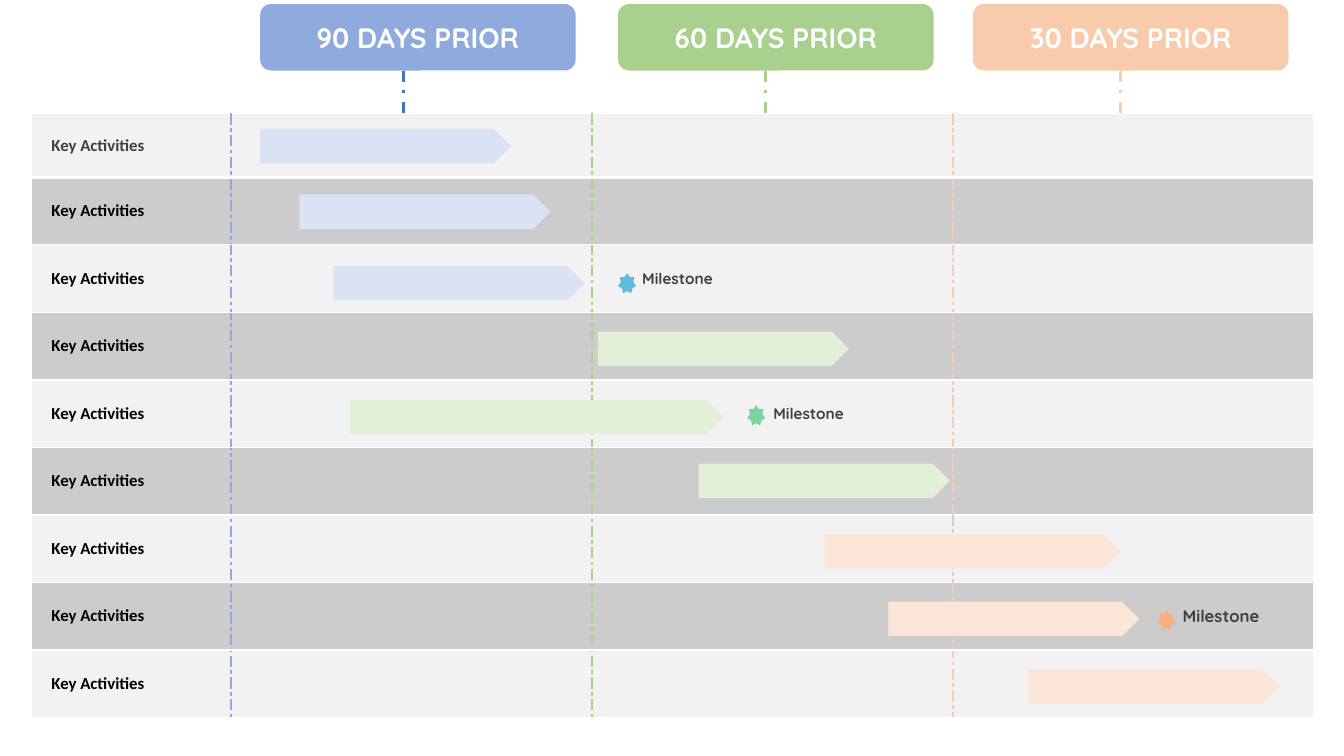
from dataclasses import dataclass
from typing import Optional

from lxml import etree
from pptx import Presentation
from pptx.dml.color import RGBColor
from pptx.enum import dml, shapes, text
from pptx.oxml import ns
from pptx.util import Inches, Pt


@dataclass(frozen=True)
class Theme:
    blue: str = "8FAADC"
    green: str = "A9D18E"
    orange: str = "F8CBAD"
    pale_blue: str = "DAE3F3"
    pale_green: str = "E2F0D9"
    pale_orange: str = "FBE5D6"
    deep_blue: str = "4472C4"
    white: str = "FFFFFF"
    black: str = "000000"
    dark: str = "404040"
    rule_grey: str = "D0CECE"
    light_row: str = "F2F2F2"
    dark_row: str = "CCCCCC"
    label_font: str = "Calibri"
    display_font: str = "Quicksand"
    header_size: int = 20
    label_size: int = 12
    milestone_size: int = 11


@dataclass(frozen=True)
class Phase:
    title: str
    left: float
    stem_x: float
    fill: str
    stem: str


@dataclass(frozen=True)
class Bar:
    left: float
    top: float
    fill: str
    width: float = 2.49


@dataclass(frozen=True)
class Milestone:
    row: int
    col: int
    indent: float
    size: int
    star_left: float
    star_top: float
    fill: str


@dataclass(frozen=True)
class Border:
    color: str
    width: float = 1
    dash: Optional[str] = None


T = Theme()

PHASES = [
    Phase("90 DAYS PRIOR", 2.58, 4, T.blue, T.deep_blue),
    Phase("60 DAYS PRIOR", 6.13, 7.59, T.green, T.green),
    Phase("30 DAYS PRIOR", 9.65, 11.11, T.orange, T.orange),
]
BARS = [
    Bar(2.58, 1.28, T.pale_blue),
    Bar(2.97, 1.93, T.pale_blue),
    Bar(3.31, 2.64, T.pale_blue),
    Bar(5.93, 3.29, T.pale_green),
    Bar(3.47, 3.97, T.pale_green, 3.71),
    Bar(6.93, 4.6, T.pale_green),
    Bar(8.18, 5.3, T.pale_orange, 2.93),
    Bar(8.81, 5.97, T.pale_orange),
    Bar(10.2, 6.64, T.pale_orange),
]
MILESTONES = [
    Milestone(2, 2, 0.5, T.milestone_size, 6.13, 2.71, "5DBBDC"),
    Milestone(4, 2, 1.8, T.milestone_size, 7.41, 4.02, "7ED39C"),
    Milestone(7, 3, 2.28, T.label_size, 11.48, 6.05, "F4B183"),
]
COL_WIDTHS = [1.98, 3.58, 3.58, 3.58]
ROW_HEIGHTS = [0.63] + [0.67] * 8
TABLE_LEFT, TABLE_TOP = 0.31, 1.13
HEADER_TOP, HEADER_HEIGHT = 0.04, 0.66
GREY_RULE_ROW = 6  # the 30-day rule turns grey in this row


def add_run(tf, content: str, font: str, size: int, color: str) -> None:
    r = tf.paragraphs[0].add_run()
    r.text = content
    r.font.name, r.font.size, r.font.bold = font, Pt(size), True
    r.font.color.rgb = RGBColor.from_string(color)


def add_filled(slide, kind, left: float, top: float, width: float, height: float, fill: str):
    sp = slide.shapes.add_shape(kind, Inches(left), Inches(top), Inches(width), Inches(height))
    sp.shadow.inherit = False
    sp.fill.solid()
    sp.fill.fore_color.rgb = RGBColor.from_string(fill)
    sp.line.fill.background()
    return sp


def set_borders(cell, borders: dict[str, Border]) -> None:
    tc_pr = cell._tc.get_or_add_tcPr()
    for i, side in enumerate("LRTB"):
        border = borders[side]
        ln = etree.Element(ns.qn(f"a:ln{side}"), w=str(Pt(border.width)))
        solid = etree.SubElement(ln, ns.qn("a:solidFill"))
        etree.SubElement(solid, ns.qn("a:srgbClr"), val=border.color)
        etree.SubElement(ln, ns.qn("a:prstDash"), val=border.dash or "solid")
        tc_pr.insert(i, ln)


def fill_cell_text(cell, content: str, indent: float, font: str, size: int, color: str) -> None:
    cell.margin_left = Inches(indent)
    cell.vertical_anchor = text.MSO_ANCHOR.MIDDLE
    add_run(cell.text_frame, content, font, size, color)


def add_schedule(slide) -> None:
    frame = slide.shapes.add_table(
        len(ROW_HEIGHTS), len(COL_WIDTHS), Inches(TABLE_LEFT), Inches(TABLE_TOP),
        Inches(sum(COL_WIDTHS)), Inches(sum(ROW_HEIGHTS)))
    table = frame.table
    table.first_row = table.horz_banding = False
    for column, width in zip(table.columns, COL_WIDTHS):
        column.width = Inches(width)

    for i, height in enumerate(ROW_HEIGHTS):
        table.rows[i].height = Inches(height)
        # Vertical rules from the left edge to the right edge of the row
        rules = [Border(T.white), *(Border(p.fill, 1.5, "dashDot") for p in PHASES), Border(T.white)]
        if i == GREY_RULE_ROW:
            rules[3] = Border(T.rule_grey, 1.5, "dashDot")
        for j in range(len(COL_WIDTHS)):
            cell = table.cell(i, j)
            cell.fill.solid()
            cell.fill.fore_color.rgb = RGBColor.from_string(T.dark_row if i % 2 else T.light_row)
            set_borders(cell, {"L": rules[j], "R": rules[j + 1], "T": Border(T.white),
                               "B": Border(T.white, 1 if i else 3)})
        fill_cell_text(table.cell(i, 0), "Key Activities", 0.2, T.label_font,
                       T.label_size, T.black if i else T.dark)

    for m in MILESTONES:
        fill_cell_text(table.cell(m.row, m.col), "Milestone", m.indent,
                       T.display_font, m.size, T.dark)


def add_header(slide, phase: Phase) -> None:
    sp = add_filled(slide, shapes.MSO_SHAPE.ROUNDED_RECTANGLE, phase.left, HEADER_TOP,
                    3.13, HEADER_HEIGHT, phase.fill)
    tf = sp.text_frame
    tf.vertical_anchor = text.MSO_ANCHOR.MIDDLE
    tf.paragraphs[0].alignment = text.PP_ALIGN.CENTER
    add_run(tf, phase.title, T.display_font, T.header_size, T.white)


def add_stem(slide, phase: Phase) -> None:
    x = Inches(phase.stem_x)
    stem = slide.shapes.add_connector(shapes.MSO_CONNECTOR.STRAIGHT, x,
                                      Inches(HEADER_TOP + HEADER_HEIGHT), x, Inches(TABLE_TOP))
    stem.line.color.rgb = RGBColor.from_string(phase.stem)
    stem.line.width = Pt(2)
    stem.line.dash_style = dml.MSO_LINE.DASH_DOT
    etree.SubElement(stem._element.spPr, ns.qn("a:effectLst"))


def main() -> None:
    prs = Presentation()
    prs.slide_width, prs.slide_height = Inches(13.33), Inches(7.5)
    slide = prs.slides.add_slide(prs.slide_layouts[6])

    # Activity grid
    add_schedule(slide)

    # Activity bars and milestone stars
    for bar in BARS:
        add_filled(slide, shapes.MSO_SHAPE.PENTAGON, bar.left, bar.top, bar.width, 0.34, bar.fill)
    for m in MILESTONES:
        add_filled(slide, shapes.MSO_SHAPE.STAR_7_POINT, m.star_left, m.star_top, 0.18, 0.2, m.fill)

    # Phase headers and their stems
    for phase in PHASES:
        add_header(slide, phase)
        add_stem(slide, phase)

    prs.save("out.pptx")


if __name__ == "__main__":
    main()
